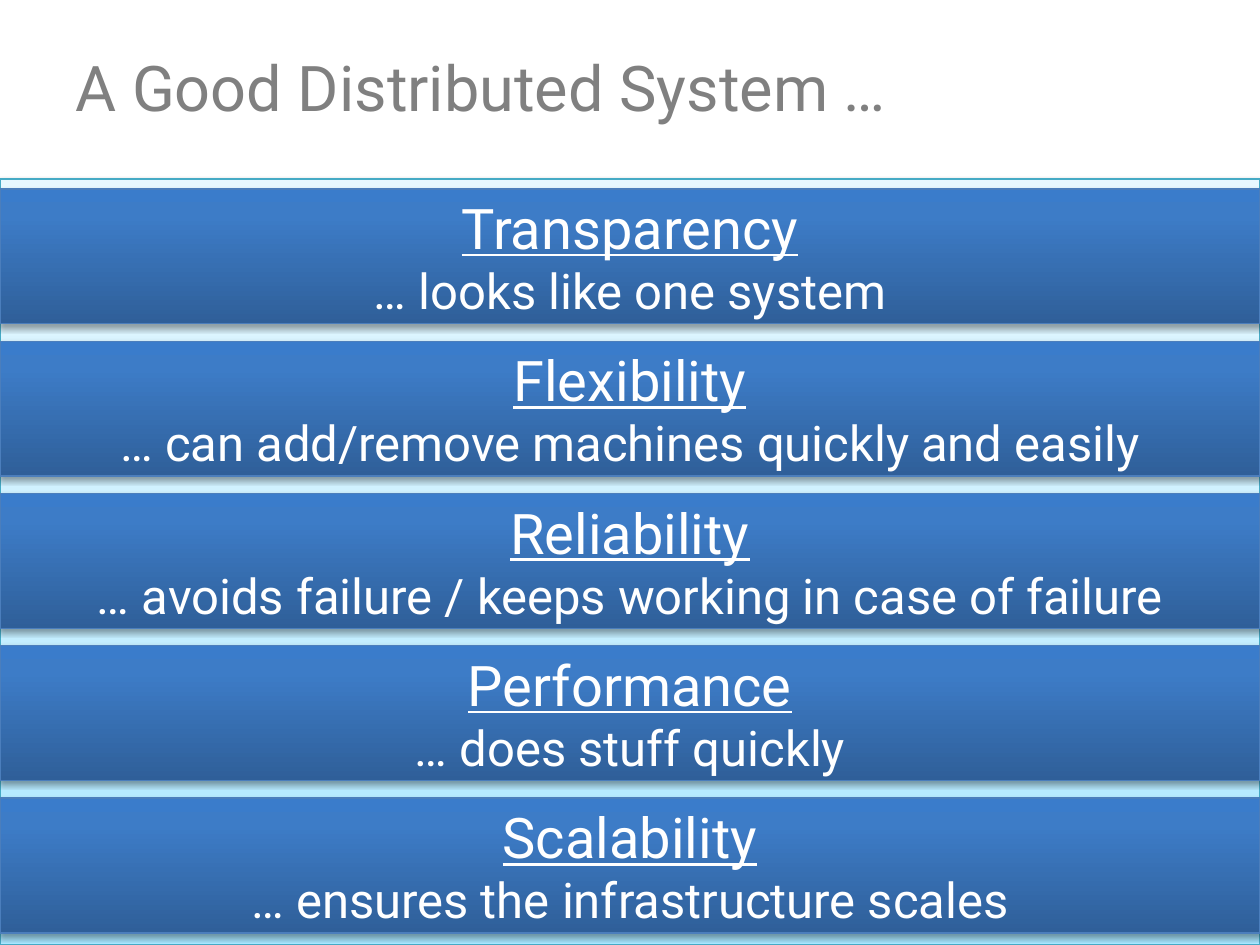
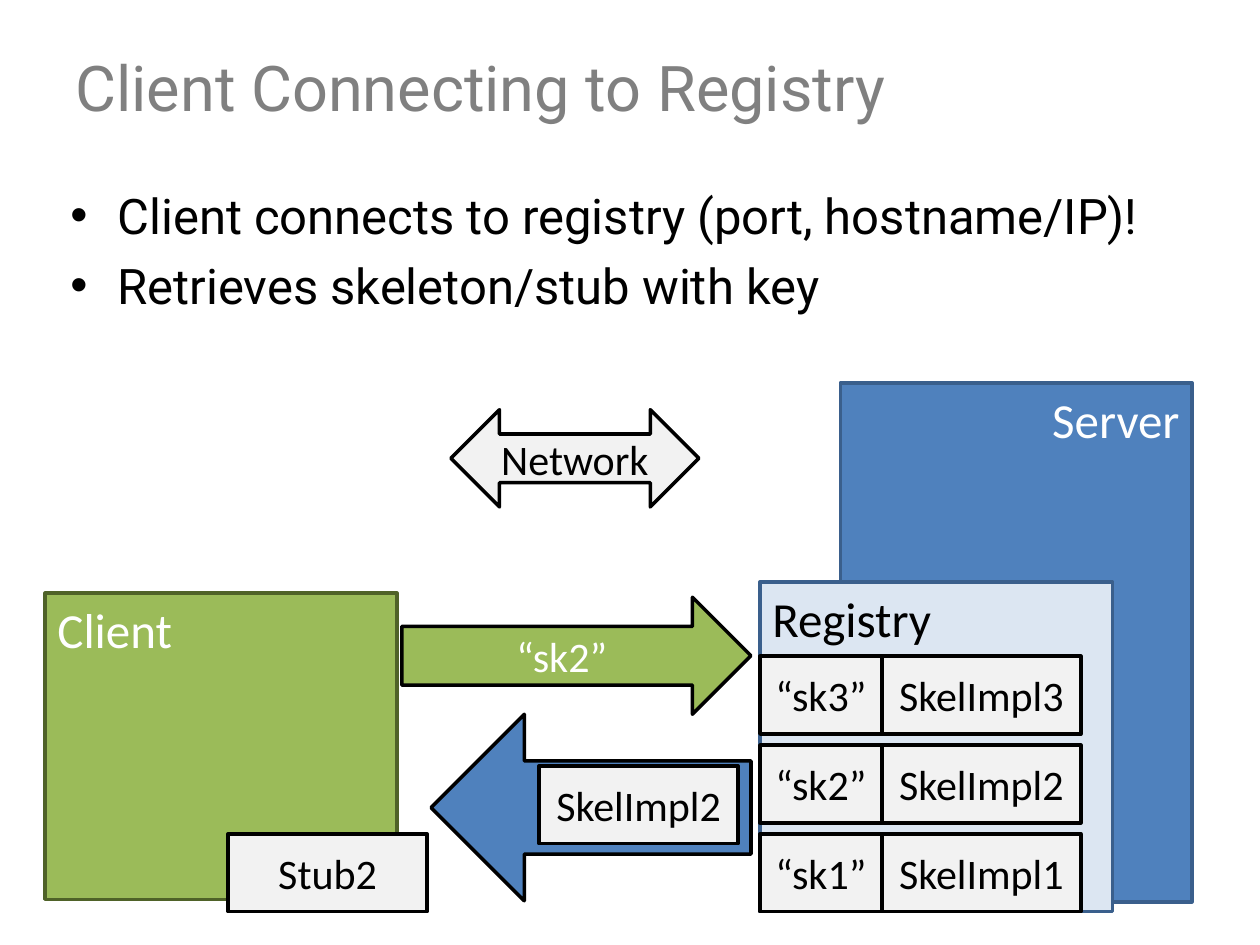
from lxml import etree
from pptx import Presentation
from pptx import util as u
from pptx.dml import color
from pptx.enum import shapes, text
from pptx.oxml import ns

SHAPE = shapes.MSO_SHAPE
ALIGN = text.PP_ALIGN
ANCHOR = text.MSO_ANCHOR

WHITE, BLACK, GREY = "FFFFFF", "000000", "808080"
BLUE, DARK_BLUE, PALE_BLUE = "4F81BD", "3A5F8C", "DCE6F2"
GREEN, DARK_GREEN, LIGHT = "9BBB59", "4F6228", "F2F2F2"
PANEL_STOPS = [(0, "A7E6FF"), (35, "C1EDFF"), (100, "E7F8FF")]
BAR_STOPS = [(0, "2F5F99"), (80, "3D7CC7"), (100, "3A7CCB")]


def rgb(code):
    """Turn a hex string into a colour."""
    return color.RGBColor.from_string(code)


def add_node(parent, tag, **attributes):
    """Append a DrawingML element to its parent."""
    values = {name: str(value) for name, value in attributes.items()}
    return etree.SubElement(parent, ns.qn(tag), values)


class Deck:
    """Hold the style and the current slide."""

    heading_font, label_font = "Roboto", "Calibri"
    block_size = 4.01, 1.57

    def __init__(self):
        """Open an empty 4:3 presentation."""
        self.show = Presentation()
        self.show.slide_width, self.show.slide_height = u.Cm(25.4), u.Cm(19.05)
        self.slide = None

    def start(self, heading):
        """Add a slide with its title."""
        self.slide = self.show.slides.add_slide(self.show.slide_layouts[6])
        frame = self.text_box(1.27, 0.76, 22.86, 1.98)
        frame.vertical_anchor = ANCHOR.MIDDLE
        frame.text = heading
        self.format(frame.paragraphs[0], 36, GREY, self.heading_font)

    def text_box(self, *place):
        """Add a wrapping text box and return its frame."""
        frame = self.slide.shapes.add_textbox(*map(u.Cm, place)).text_frame
        frame.word_wrap = True
        return frame

    def format(self, paragraph, size, ink, font, align=ALIGN.LEFT, underline=False):
        """Style a paragraph and its runs."""
        paragraph.alignment = align
        for run in paragraph.runs:
            run.font.size, run.font.name = u.Pt(size), font
            run.font.color.rgb = rgb(ink)
            run.font.underline = underline

    def outline(self, kind, place, edge, width):
        """Add an outlined shape without a shadow."""
        shape = self.slide.shapes.add_shape(kind, *map(u.Cm, place))
        shape.shadow.inherit = False
        shape.line.color.rgb = rgb(edge)
        shape.line.width = u.Pt(width)
        return shape

    def glossy(self, place, stops, edge, opacity, distance):
        """Add a gradient rectangle with a soft shadow below."""
        shape = self.outline(SHAPE.RECTANGLE, place, edge, 0.75)
        shape.fill.gradient()
        shape.fill.gradient_angle = 90
        properties = shape._element.spPr
        stop_list = properties.find(".//" + ns.qn("a:gsLst"))
        for old in list(stop_list):
            stop_list.remove(old)
        for position, code in stops:
            stop = add_node(stop_list, "a:gs", pos=position * 1000)
            add_node(stop, "a:srgbClr", val=code)
        shadow = add_node(properties.find(ns.qn("a:effectLst")), "a:outerShdw",
                          blurRad=u.Pt(3.1), dist=u.Pt(distance),
                          dir=90 * 60000, rotWithShape=0)
        shade = add_node(shadow, "a:srgbClr", val=BLACK)
        add_node(shade, "a:alpha", val=opacity * 1000)
        return shape

    def quality_bar(self, place, quality, meaning):
        """Add a bar with an underlined quality and its meaning."""
        frame = self.glossy(place, BAR_STOPS, "4B7EBC", 35, 1.8).text_frame
        frame.vertical_anchor = ANCHOR.MIDDLE
        frame.text = f"{quality}\n{meaning}"
        for paragraph, size in zip(frame.paragraphs, (32, 28)):
            self.format(paragraph, size, WHITE, self.heading_font,
                        ALIGN.CENTER, size == 32)

    def bullets(self, place, points):
        """Add a bulleted list."""
        frame = self.text_box(*place)
        frame.text = "\n".join(points)
        for paragraph in frame.paragraphs:
            self.format(paragraph, 28, BLACK, self.heading_font)
            paragraph.space_before = u.Pt(6.5)
            properties = paragraph._p.get_or_add_pPr()
            properties.set("marL", str(u.Cm(0.95)))
            properties.set("indent", str(-u.Cm(0.95)))
            add_node(properties, "a:buFont", typeface="Arial")
            add_node(properties, "a:buChar", char="•")

    def labelled(self, kind, place, fill, edge, label, ink, size=24,
                 align=ALIGN.CENTER, anchor=ANCHOR.MIDDLE):
        """Add a flat shape with a label."""
        shape = self.outline(kind, place, edge, 2)
        shape.fill.solid()
        shape.fill.fore_color.rgb = rgb(fill)
        if label:
            frame = shape.text_frame
            frame.vertical_anchor = anchor
            frame.text = label
            self.format(frame.paragraphs[0], size, ink, self.label_font, align)

    def machine(self, place, fill, edge, label, ink, align=ALIGN.LEFT):
        """Add a large box labelled at its top."""
        self.labelled(SHAPE.RECTANGLE, place, fill, edge, label, ink, 28,
                      align, ANCHOR.TOP)

    def block(self, left, top, label, width=block_size[0]):
        """Add a small light box."""
        place = left, top, width, self.block_size[1]
        self.labelled(SHAPE.RECTANGLE, place, LIGHT, BLACK, label, BLACK)

    def arrow(self, kind, place, fill, label="", ink=WHITE):
        """Add a block arrow."""
        self.labelled(kind, place, fill, BLACK, label, ink)


def build_qualities(deck):
    """Build the slide on the qualities of a distributed system."""
    deck.start("A Good Distributed System …")
    deck.glossy((0, 3.61, 25.4, 15.44), PANEL_STOPS, "46AAC5", 38, 1.6)
    qualities = [
        ("Transparency", "… looks like one system"),
        ("Flexibility", "… can add/remove machines quickly and easily"),
        ("Reliability", "… avoids failure / keeps working in case of failure"),
        ("Performance", "… does stuff quickly"),
        ("Scalability", "… ensures the infrastructure scales"),
    ]
    for row, (quality, meaning) in enumerate(qualities):
        deck.quality_bar((0, 3.81 + 3.07 * row, 25.4, 2.72), quality, meaning)


def build_registry(deck):
    """Build the slide on the client connecting to the registry."""
    deck.start("Client Connecting to Registry")
    deck.bullets((1.17, 3.61, 22.86, 4.45),
                 ["Client connects to registry (port, hostname/IP)!",
                  "Retrieves skeleton/stub with key"])
    deck.machine((16.94, 7.72, 7.09, 10.46), BLUE, DARK_BLUE, "Server", WHITE,
                 ALIGN.RIGHT)
    deck.machine((15.32, 11.73, 7.11, 6.65), PALE_BLUE, DARK_BLUE, "Registry", BLACK)
    deck.machine((0.91, 11.96, 7.09, 6.17), GREEN, DARK_GREEN, "Client", WHITE)
    for row, number in enumerate((3, 2, 1)):
        top = 13.23 + 1.79 * row
        deck.block(15.32, top, f"“sk{number}”", 2.46)
        deck.block(17.78, top, f"SkelImpl{number}")
    deck.arrow(SHAPE.LEFT_RIGHT_ARROW, (9.09, 8.26, 5, 1.96), LIGHT, "Network", BLACK)
    deck.arrow(SHAPE.RIGHT_ARROW, (8.1, 12.04, 7.04, 2.36), GREEN, "“sk2”")
    deck.arrow(SHAPE.LEFT_ARROW, (8.69, 14.4, 6.45, 3.76), BLUE)
    deck.block(10.87, 15.44, "SkelImpl2")
    deck.block(4.6, 16.81, "Stub2")


def main():
    """Build and save the presentation."""
    deck = Deck()
    build_qualities(deck)
    build_registry(deck)
    deck.show.save("out.pptx")


if __name__ == "__main__":
    main()
